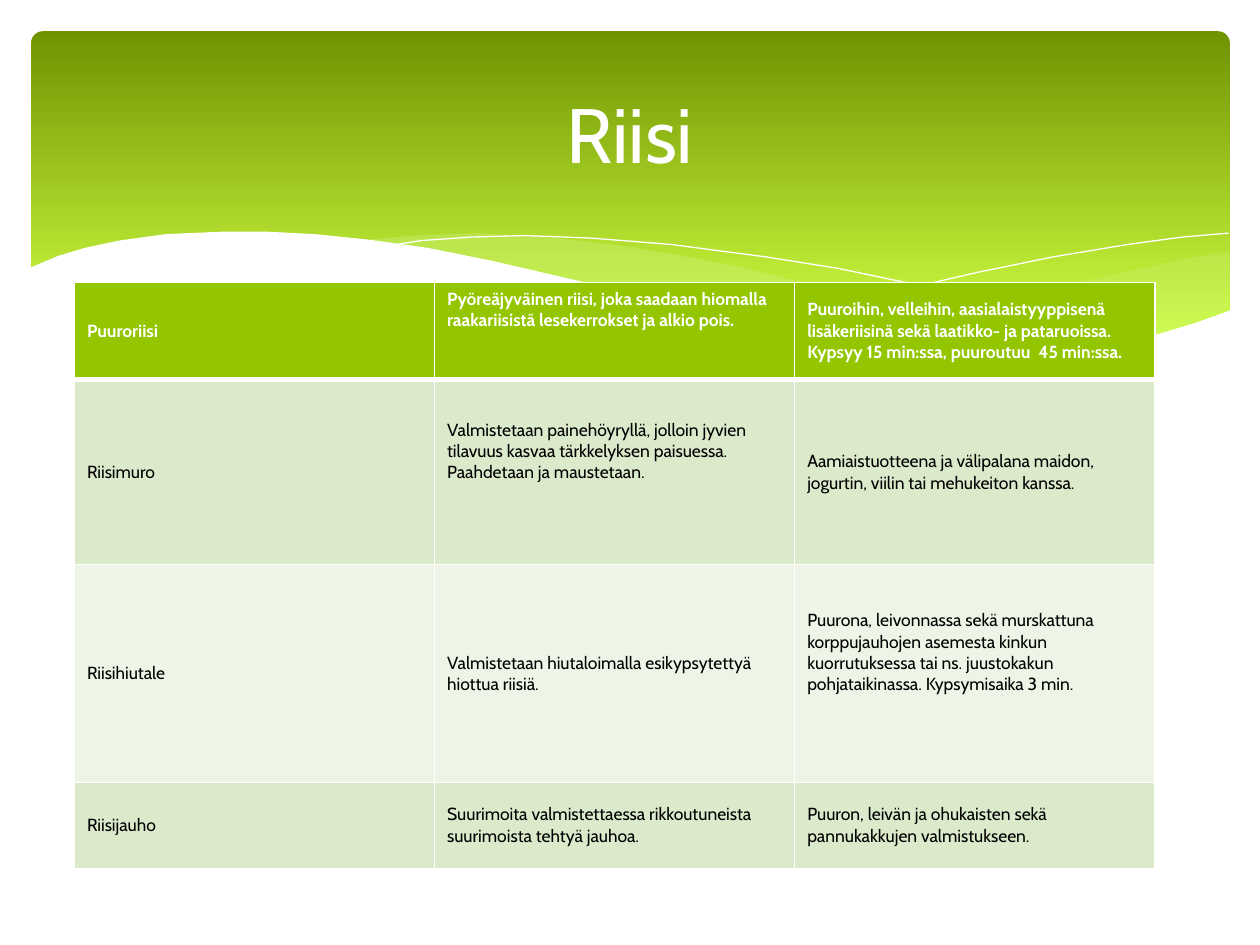
from lxml.etree import SubElement
from pptx import Presentation
from pptx.dml.color import RGBColor
from pptx.enum.shapes import MSO_SHAPE
from pptx.enum.text import MSO_ANCHOR, PP_ALIGN
from pptx.oxml.ns import qn
from pptx.util import Cm, Pt

FONT = "Cabin"
WHITE = "FFFFFF"
PALE_GREEN = "CAF278"
ROW_FILLS = ["94C600", "DCEACC", "EEF5E7", "DCEACC"]
ROW_HEIGHTS = [1.96, 3.73, 4.39, 1.73]
COLUMN_WIDTH = 7.26
RAISED_CELLS = {(0, 1), (1, 1), (2, 2)}
RICE_PRODUCTS = [
    ("Puuroriisi",
     "Pyöreäjyväinen riisi, joka saadaan hiomalla raakariisistä lesekerrokset ja alkio pois.",
     "Puuroihin, velleihin, aasialaistyyppisenä lisäkeriisinä sekä laatikko- ja pataruoissa. "
     "Kypsyy 15 min:ssa, puuroutuu  45 min:ssa."),
    ("Riisimuro",
     "Valmistetaan painehöyryllä, jolloin jyvien tilavuus kasvaa tärkkelyksen paisuessa. "
     "Paahdetaan ja maustetaan.",
     "Aamiaistuotteena ja välipalana maidon, jogurtin, viilin tai mehukeiton kanssa."),
    ("Riisihiutale",
     "Valmistetaan hiutaloimalla esikypsytettyä hiottua riisiä.",
     "Puurona, leivonnassa sekä murskattuna korppujauhojen asemesta kinkun kuorrutuksessa "
     "tai ns. juustokakun pohjataikinassa. Kypsymisaika 3 min."),
    ("Riisijauho",
     "Suurimoita valmistettaessa rikkoutuneista suurimoista tehtyä jauhoa.",
     "Puuron, leivän ja ohukaisten sekä pannukakkujen valmistukseen."),
]

RIGHT_WAVE = [
    (24.79, 5.08), (24.08, 5.18), (23.01, 5.41), (21.87, 5.66), (20.45, 6.02), (19.13, 6.3),
    (17.93, 6.53), (16.79, 6.73), (17.55, 6.83), (18.59, 6.96), (19.53, 7.04), (20.68, 7.06),
    (21.69, 7.01), (22.58, 6.91), (23.39, 6.73), (24.1, 6.53), (24.79, 6.27)]
MIDDLE_WAVE = [
    (22.68, 6.93), (21.26, 6.73), (19.69, 6.45), (17.93, 6.1), (15.98, 5.64), (14.83, 5.36),
    (13.74, 5.16), (12.75, 4.98), (11.23, 4.8), (9.65, 4.7), (8.33, 4.75), (7.26, 4.85),
    (8.69, 5.05), (10.26, 5.36), (11.4, 5.64), (13.46, 6.1), (15.27, 6.48), (16.89, 6.76),
    (18.34, 6.96), (19.63, 7.04), (21.03, 7.06)]
FALLING_LINE = [
    (7.85, 4.95), (8.51, 4.85), (9.5, 4.78), (10.57, 4.75), (11.91, 4.8), (13.54, 4.93),
    (15.44, 5.18), (16.89, 5.41), (18.47, 5.74), (20.19, 6.12), (22.07, 6.63), (23.04, 6.91)]
RISING_LINE = [
    (15.57, 6.53), (17.07, 6.12), (18.29, 5.82), (19.71, 5.49), (21.23, 5.18), (22.73, 4.93),
    (23.83, 4.78), (24.77, 4.7)]
WHITE_WAVE = [
    (24.82, 6.25), (24.13, 6.5), (23.37, 6.73), (22.53, 6.88), (21.59, 6.99), (20.55, 7.04),
    (19.33, 6.99), (17.98, 6.86), (16.46, 6.65), (14.71, 6.35), (12.78, 5.92), (11.35, 5.59),
    (9.93, 5.26), (8.64, 5), (7.42, 4.83), (6.35, 4.72), (5.36, 4.67), (4.5, 4.67),
    (3.35, 4.72), (2.41, 4.85), (1.7, 5), (1.17, 5.16), (0.58, 5.41), (0.58, 8.36), (24.82, 8.36)]


def rgb(value):
    """Return the colour for a hex string."""
    return RGBColor.from_string(value)


def style_font(paragraph, size, color, bold=False):
    """Format every run of a paragraph."""
    for run in paragraph.runs:
        run.font.name = FONT
        run.font.size = Pt(size)
        run.font.bold = bold
        run.font.color.rgb = rgb(color)


def add_banner(slide):
    """Draw the rounded green gradient behind the title."""
    banner = slide.shapes.add_shape(
        MSO_SHAPE.ROUNDED_RECTANGLE, Cm(0.63), Cm(0.63), Cm(24.16), Cm(6.86))
    banner.adjustments[0] = 0.034
    banner.shadow.inherit = False
    banner.line.fill.background()
    banner.fill.gradient()
    banner.fill.gradient_angle = 270
    shades = [(0, "6F9400"), (0.9, "D0FF44")]
    for stop, (position, color) in zip(banner.fill.gradient_stops, shades):
        stop.position = position
        stop.color.rgb = rgb(color)


def add_outline(slide, points, closed):
    """Draw a freeform through points given in centimetres."""
    start, *others = [(Cm(x), Cm(y)) for x, y in points]
    builder = slide.shapes.build_freeform(*start)
    builder.add_line_segments(others, close=closed)
    outline = builder.convert_to_shape()
    outline.shadow.inherit = False
    return outline


def add_wave(slide, points, color, opacity=100):
    """Draw a filled wave with the given opacity in percent."""
    wave = add_outline(slide, points, True)
    wave.line.fill.background()
    wave.fill.solid()
    wave.fill.fore_color.rgb = rgb(color)
    if opacity < 100:
        shade = wave.fill._xPr.find(qn("a:solidFill"))[0]
        SubElement(shade, qn("a:alpha"), val=str(opacity * 1000))


def add_hairline(slide, points):
    """Draw a thin white curve."""
    hairline = add_outline(slide, points, False)
    hairline.fill.background()
    hairline.line.color.rgb = rgb(WHITE)
    hairline.line.width = Pt(0)


def set_title(slide, wording):
    """Fill the title and bring it in front of the banner."""
    title = slide.shapes.title
    title.left, title.top, title.width, title.height = Cm(1.27), Cm(0.94), Cm(22.86), Cm(3.48)
    title.text_frame.text = wording
    title.text_frame.vertical_anchor = MSO_ANCHOR.MIDDLE
    heading = title.text_frame.paragraphs[0]
    heading.alignment = PP_ALIGN.CENTER
    style_font(heading, 44, WHITE)
    slide.shapes.element.append(title.element)


def set_borders(cell, top, bottom):
    """Give a cell white borders with widths in points."""
    properties = cell._tc.get_or_add_tcPr()
    for side, width in (("L", 1), ("R", 1), ("T", top), ("B", bottom)):
        border = SubElement(properties, qn(f"a:ln{side}"), w=str(Pt(width)))
        SubElement(SubElement(border, qn("a:solidFill")), qn("a:srgbClr"), val=WHITE)


def fill_cell(cell, wording, row, raised):
    """Write and format one table cell."""
    set_borders(cell, 3 if row == 1 else 1, 3 if row == 0 else 1)
    cell.fill.solid()
    cell.fill.fore_color.rgb = rgb(ROW_FILLS[row])
    cell.vertical_anchor = MSO_ANCHOR.MIDDLE
    if raised:
        cell.margin_bottom = Cm(0.98)
    cell.text_frame.text = wording
    header = row == 0
    style_font(cell.text_frame.paragraphs[0], 10, WHITE if header else "000000", header)


def add_rice_table(slide):
    """Build the table of rice products."""
    columns = len(RICE_PRODUCTS[0])
    table = slide.shapes.add_table(
        len(RICE_PRODUCTS), columns, Cm(1.5), Cm(5.69),
        Cm(COLUMN_WIDTH * columns), Cm(sum(ROW_HEIGHTS))).table
    for column in table.columns:
        column.width = Cm(COLUMN_WIDTH)
    for row, product in enumerate(RICE_PRODUCTS):
        table.rows[row].height = Cm(ROW_HEIGHTS[row])
        for column, wording in enumerate(product):
            fill_cell(table.cell(row, column), wording, row, (row, column) in RAISED_CELLS)


def main():
    """Build and save the slide."""
    presentation = Presentation()
    presentation.slide_width, presentation.slide_height = Cm(25.4), Cm(19.05)
    slide = presentation.slides.add_slide(presentation.slide_layouts[5])
    add_banner(slide)
    add_wave(slide, RIGHT_WAVE, PALE_GREEN, 29)
    add_wave(slide, MIDDLE_WAVE, PALE_GREEN, 40)
    add_hairline(slide, FALLING_LINE)
    add_hairline(slide, RISING_LINE)
    add_wave(slide, WHITE_WAVE, WHITE)
    set_title(slide, "Riisi")
    add_rice_table(slide)
    presentation.save("out.pptx")


if __name__ == "__main__":
    main()
